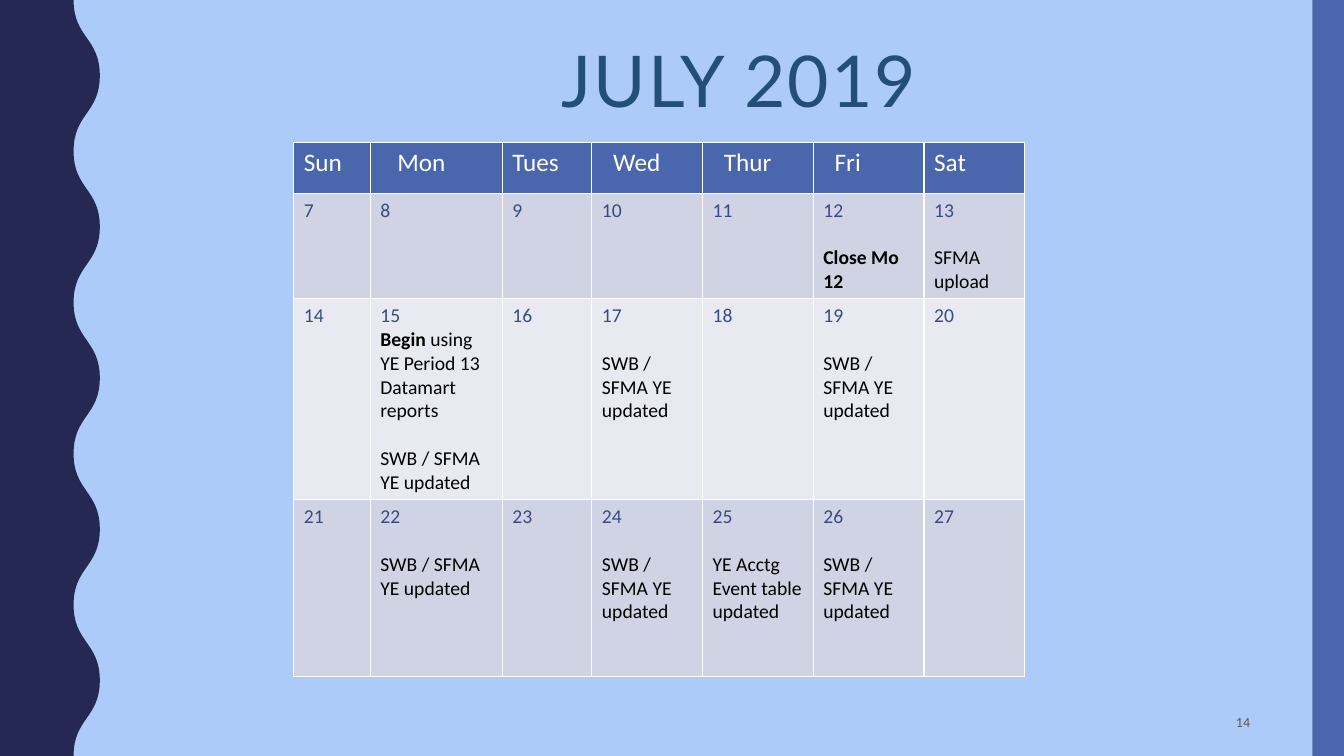
"""Build the July 2019 year-end closing calendar slide."""
from dataclasses import dataclass

import lxml.etree
import pptx
import pptx.dml.color
import pptx.enum.shapes
import pptx.enum.text
import pptx.oxml
import pptx.oxml.ns
import pptx.util

Pt = pptx.util.Pt
qn = pptx.oxml.ns.qn
COLORS = {
    "sky": "ACCBF9",
    "navy": "242852",
    "blue": "4A66AC",
    "title": "234F77",
    "date": "384C81",
    "note": "000000",
    "white": "FFFFFF",
    "odd_week": "D0D3E3",
    "even_week": "E9EAF1",
    "number": "595959",
}
SLIDE_WIDTH, SLIDE_HEIGHT = 960, 540
COLUMN_WIDTHS = (54.6, 94.3, 64, 79.1, 79.1, 79.1, 71.6)
ROW_HEIGHTS = (36.7, 75.2, 143.6, 126.4)
TABLE_LEFT, TABLE_TOP = 209.9, 101.6
CELL_INSET = 7.2
NOTE_GAP = 17
WAVE_INNER, WAVE_OUTER, HALF_WAVE = 52.56, 71.28, 54


@dataclass(frozen=True)
class Weekday:
    name: str
    indent: float = 0


@dataclass(frozen=True)
class Note:
    text: str = ""
    bold: str = ""
    gap: float = NOTE_GAP


WEEKDAYS = (
    Weekday("Sun"), Weekday("Mon", 12.2), Weekday("Tues"), Weekday("Wed", 8.1),
    Weekday("Thur", 8.1), Weekday("Fri", 8.1), Weekday("Sat"),
)
UPDATED = Note("SWB / SFMA YE updated")
NOTES = {
    12: (Note(bold="Close Mo 12"),),
    13: (Note("SFMA upload"),),
    15: (Note(" using YE Period 13", "Begin", 0), Note("Datamart reports", gap=0), UPDATED),
    17: (UPDATED,),
    19: (UPDATED,),
    22: (UPDATED,),
    24: (UPDATED,),
    25: (Note("YE Acctg Event table updated"),),
    26: (UPDATED,),
}
FIRST_DATE = 7


def color(name: str) -> pptx.dml.color.RGBColor:
    return pptx.dml.color.RGBColor.from_string(COLORS[name])


def style(span, size: float, color_name: str, bold: bool = False, font: str = "Calibri") -> None:
    span.font.name = font
    span.font.size = Pt(size)
    span.font.bold = bold
    span.font.color.rgb = color(color_name)


def paint(shape, color_name: str) -> None:
    shape.shadow.inherit = False
    shape.fill.solid()
    shape.fill.fore_color.rgb = color(color_name)
    shape.line.fill.background()


def draw_bar(page) -> None:
    left = 937.44
    bar = page.shapes.add_shape(
        pptx.enum.shapes.MSO_SHAPE.RECTANGLE, Pt(left), 0, Pt(SLIDE_WIDTH - left), Pt(SLIDE_HEIGHT))
    paint(bar, "blue")


def draw_wave(page) -> None:
    halves = SLIDE_HEIGHT // HALF_WAVE
    edges = [(Pt((WAVE_INNER, WAVE_OUTER)[half % 2]), Pt(half * HALF_WAVE))
             for half in range(halves + 1)]
    builder = page.shapes.build_freeform(*edges[0])
    builder.add_line_segments([*edges[1:], (0, Pt(SLIDE_HEIGHT)), (0, 0)], close=True)
    wave = builder.convert_to_shape()
    paint(wave, "navy")
    segments = list(wave._element.iter(qn("a:lnTo")))
    for segment, (start_x, start_y), (end_x, end_y) in zip(segments, edges, edges[1:]):
        segment.tag = qn("a:cubicBezTo")
        middle_y = (start_y + end_y) // 2
        for index, x in enumerate((start_x, end_x)):
            control = lxml.etree.Element(qn("a:pt"), x=str(x), y=str(middle_y))
            segment.insert(index, control)


def draw_text(page, left: float, top: float, width: float, height: float, text: str):
    box = page.shapes.add_textbox(Pt(left), Pt(top), Pt(width), Pt(height))
    box.text_frame.word_wrap = True
    box.text_frame.text = text
    para = box.text_frame.paragraphs[0]
    return box.text_frame, para, para.runs[0]


def draw_title(page) -> None:
    frame, para, span = draw_text(page, 221.76, 29.52, 552.96, 72, "JULY 2019")
    frame.margin_left = Pt(179.2)
    para.line_spacing = 0.9
    style(span, 51, "title", font="Lato")
    span._r.get_or_add_rPr().set("spc", "150")


def draw_number(page) -> None:
    frame, para, span = draw_text(page, 678.24, 501.84, 221.76, 27.36, "14")
    frame.vertical_anchor = pptx.enum.text.MSO_ANCHOR.MIDDLE
    para.alignment = pptx.enum.text.PP_ALIGN.RIGHT
    style(span, 10, "number")


def dress_cell(cell, fill_name: str) -> None:
    properties = cell._tc.get_or_add_tcPr()
    for side in ("a:lnL", "a:lnR", "a:lnT", "a:lnB"):
        line = lxml.etree.SubElement(properties, qn(side), w=str(Pt(1)))
        solid = lxml.etree.SubElement(line, qn("a:solidFill"))
        lxml.etree.SubElement(solid, qn("a:srgbClr"), val=COLORS["white"])
    cell.fill.solid()
    cell.fill.fore_color.rgb = color(fill_name)


def fill_header(cell, weekday: Weekday) -> None:
    dress_cell(cell, "blue")
    cell.margin_left = Pt(CELL_INSET + weekday.indent)
    cell.text_frame.text = weekday.name
    style(cell.text_frame.paragraphs[0].runs[0], 18, "white")


def fill_date(cell, date: int, fill_name: str) -> None:
    dress_cell(cell, fill_name)
    cell.text_frame.text = str(date)
    style(cell.text_frame.paragraphs[0].runs[0], 14, "date")
    for note in NOTES.get(date, ()):
        para = cell.text_frame.add_paragraph()
        para.space_before = Pt(note.gap)
        para.text = note.bold or note.text
        style(para.runs[0], 14, "note", bold=bool(note.bold))
        if note.bold and note.text:
            span = para.add_run()
            span.text = note.text
            style(span, 14, "note")


def draw_calendar(page) -> None:
    table = page.shapes.add_table(
        len(ROW_HEIGHTS), len(WEEKDAYS), Pt(TABLE_LEFT), Pt(TABLE_TOP),
        Pt(sum(COLUMN_WIDTHS)), Pt(sum(ROW_HEIGHTS))).table
    for column, width in zip(table.columns, COLUMN_WIDTHS):
        column.width = Pt(width)
    for row, height in zip(table.rows, ROW_HEIGHTS):
        row.height = Pt(height)
    for column, weekday in enumerate(WEEKDAYS):
        fill_header(table.cell(0, column), weekday)
        for week in range(1, len(ROW_HEIGHTS)):
            date = FIRST_DATE + (week - 1) * len(WEEKDAYS) + column
            fill_date(table.cell(week, column), date, "odd_week" if week % 2 else "even_week")


def main() -> None:
    deck = pptx.Presentation()
    deck.slide_width, deck.slide_height = Pt(SLIDE_WIDTH), Pt(SLIDE_HEIGHT)
    page = deck.slides.add_slide(deck.slide_layouts[6])
    page.background.fill.solid()
    page.background.fill.fore_color.rgb = color("sky")
    draw_bar(page)
    draw_wave(page)
    draw_title(page)
    draw_calendar(page)
    draw_number(page)
    deck.save("out.pptx")


if __name__ == "__main__":
    main()
